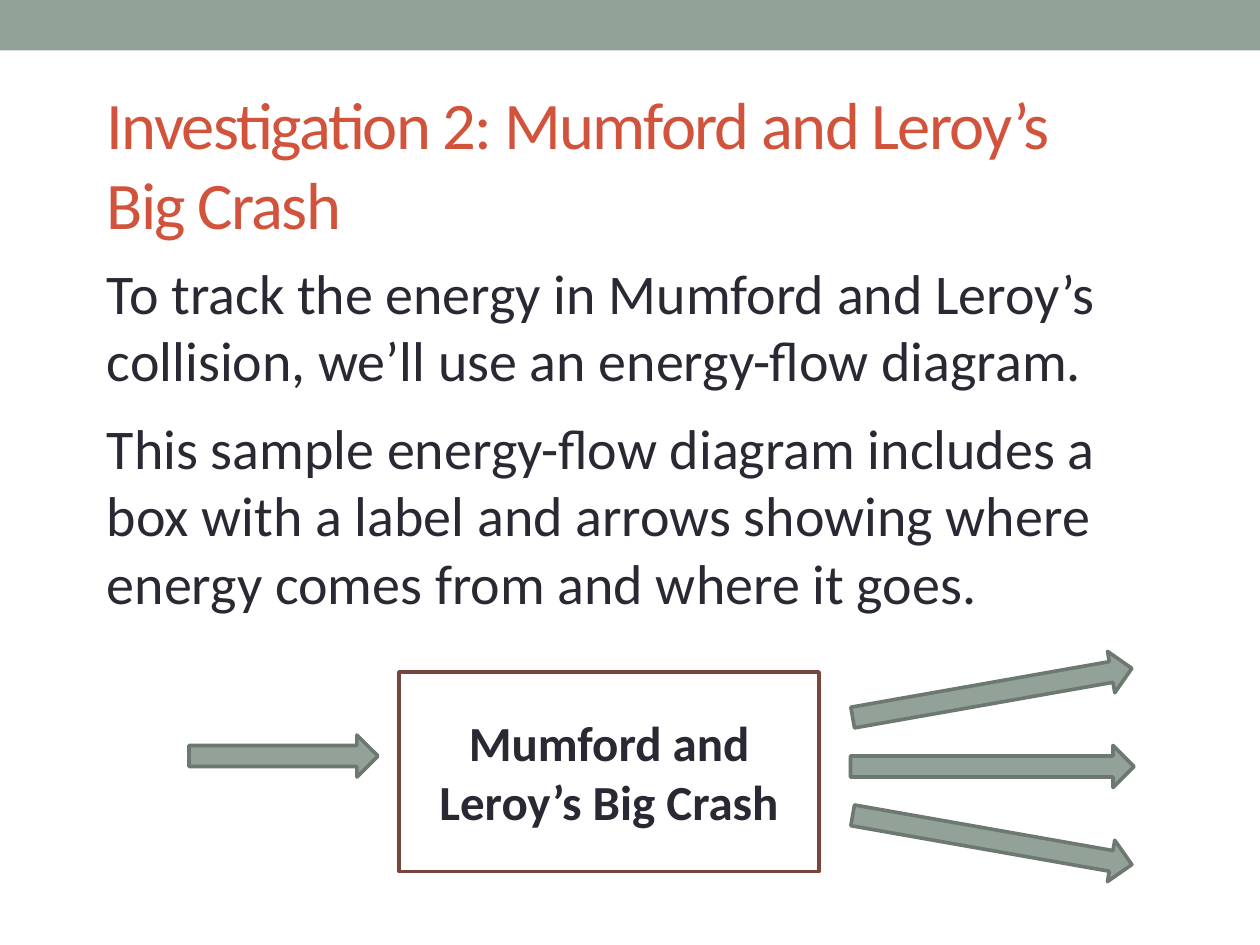
"""Build the energy-flow diagram slide for Investigation 2."""
from dataclasses import dataclass

from pptx import Presentation
from pptx.dml.color import RGBColor
from pptx.enum.shapes import MSO_SHAPE
from pptx.enum.text import MSO_ANCHOR, PP_ALIGN
from pptx.shapes.autoshape import Shape
from pptx.slide import Slide
from pptx.text.text import TextFrame, _Paragraph, _Run
from pptx.util import Pt

FONT = "Calibri"
SAGE = RGBColor(0x93, 0xA2, 0x99)
SAGE_DARK = RGBColor(0x6D, 0x78, 0x71)
RUST = RGBColor(0xD2, 0x53, 0x3C)
BROWN = RGBColor(0x79, 0x46, 0x3D)
INK = RGBColor(0x29, 0x29, 0x34)
WHITE = RGBColor(0xFF, 0xFF, 0xFF)


@dataclass(frozen=True)
class Box:
    left: float
    top: float
    width: float
    height: float


@dataclass(frozen=True)
class Arrow:
    left: float
    top: float
    width: float
    rotation: float = 0


@dataclass(frozen=True)
class BodyText:
    text: str
    space_before: float


BANNER = Box(0, 0, 720, 28.8)
TITLE = Box(54, 54, 630, 78)
BODY = Box(54, 144, 630, 366)
LABEL = Box(228, 384, 240, 114)
ARROW_HEIGHT = 24
ARROWS = [Arrow(108, 420, 108)] + [
    Arrow(486, 384 + 42 * i, 162, 10 * (i - 1)) for i in range(3)
]
TITLE_LINES = ["Investigation 2: Mumford and Leroy’s ", "Big Crash"]
BODY_TEXTS = [
    BodyText("To track the energy in Mumford and Leroy’s collision, "
             "we’ll use an energy-flow diagram.", 6),
    BodyText("This sample energy-flow diagram includes a box with a label and "
             "arrows showing where energy comes from and where it goes.", 12),
]


def add_run(p: _Paragraph, text: str, size: float, color: RGBColor,
            bold: bool = False) -> _Run:
    """Append one formatted run to a paragraph."""
    r = p.add_run()
    r.text = text
    r.font.name = FONT
    r.font.size = Pt(size)
    r.font.bold = bold
    r.font.color.rgb = color
    return r


def add_text_box(s: Slide, box: Box, anchor: MSO_ANCHOR) -> TextFrame:
    """Add a wrapping text box and return its text frame."""
    sp = s.shapes.add_textbox(Pt(box.left), Pt(box.top), Pt(box.width), Pt(box.height))
    tf = sp.text_frame
    tf.word_wrap = True
    tf.vertical_anchor = anchor
    return tf


def add_filled(s: Slide, kind: MSO_SHAPE, box: Box, fill: RGBColor,
               line: RGBColor | None = None) -> Shape:
    """Add a flat preset shape with an optional outline."""
    sp = s.shapes.add_shape(kind, Pt(box.left), Pt(box.top), Pt(box.width), Pt(box.height))
    sp.shadow.inherit = False
    sp.fill.solid()
    sp.fill.fore_color.rgb = fill
    if line is None:
        sp.line.fill.background()
    else:
        sp.line.color.rgb = line
        sp.line.width = Pt(2.08)
    return sp


def add_title(s: Slide) -> None:
    """Add the two-line title with tightened letter spacing."""
    p = add_text_box(s, TITLE, MSO_ANCHOR.MIDDLE).paragraphs[0]
    for i, line in enumerate(TITLE_LINES):
        if i:
            p.add_line_break()
        r = add_run(p, line, 38, RUST)
        r.font._element.set("spc", "-100")


def add_body(s: Slide) -> None:
    """Add the explanatory paragraphs."""
    tf = add_text_box(s, BODY, MSO_ANCHOR.TOP)
    for i, item in enumerate(BODY_TEXTS):
        p = tf.add_paragraph() if i else tf.paragraphs[0]
        p.space_before = Pt(item.space_before)
        add_run(p, item.text, 32, INK)


def add_label(s: Slide) -> None:
    """Add the labelled box in the middle of the diagram."""
    tf = add_filled(s, MSO_SHAPE.RECTANGLE, LABEL, WHITE, BROWN).text_frame
    tf.word_wrap = True
    tf.vertical_anchor = MSO_ANCHOR.MIDDLE
    p = tf.paragraphs[0]
    p.alignment = PP_ALIGN.CENTER
    add_run(p, "Mumford and Leroy’s Big Crash", 28, INK, bold=True)


def add_arrow(s: Slide, arrow: Arrow) -> None:
    """Add one energy arrow."""
    box = Box(arrow.left, arrow.top, arrow.width, ARROW_HEIGHT)
    sp = add_filled(s, MSO_SHAPE.RIGHT_ARROW, box, SAGE, SAGE_DARK)
    sp.rotation = arrow.rotation


def main() -> None:
    """Build and save the slide."""
    prs = Presentation()
    prs.slide_width, prs.slide_height = Pt(720), Pt(540)
    s = prs.slides.add_slide(prs.slide_layouts[6])
    add_filled(s, MSO_SHAPE.RECTANGLE, BANNER, SAGE)
    add_title(s)
    add_body(s)
    add_label(s)
    for arrow in ARROWS:
        add_arrow(s, arrow)
    prs.save("out.pptx")


if __name__ == "__main__":
    main()
